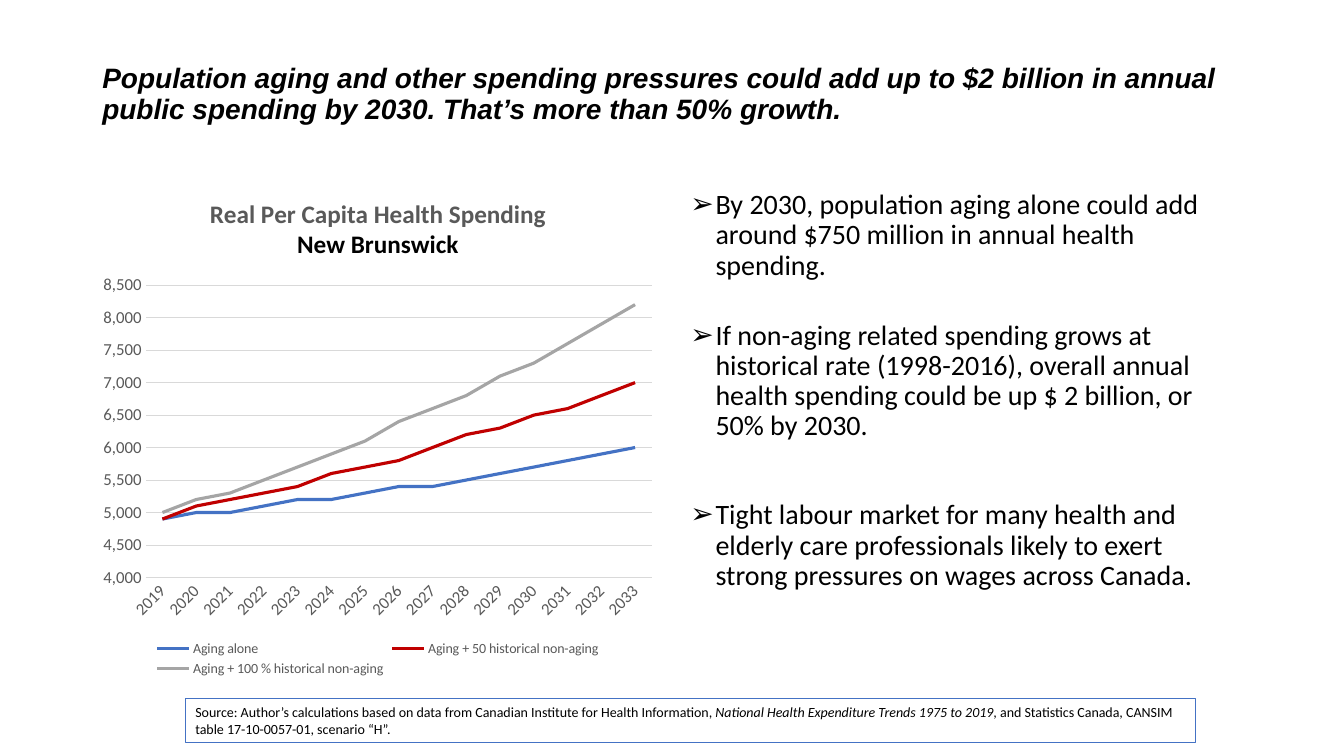
import pptx
import pptx.util
import pptx.chart.data
import pptx.dml.color
import pptx.enum.chart
import pptx.enum.shapes
import pptx.enum.text
import lxml.etree

Pt = pptx.util.Pt
MSO_ANCHOR = pptx.enum.text.MSO_ANCHOR

THEME = {
    "heading_font": "Arial", "body_font": "Calibri",
    "black": "000000", "white": "FFFFFF", "gray": "595959", "grid": "D9D9D9",
    "blue": "4472C4", "red": "C00000", "silver": "A5A5A5",
    "large": 20, "chart_title": 18, "axis": 12, "small": 10,
}

TITLE = ("Population aging and other spending pressures could add up to $2 billion "
         "in annual public spending by 2030. That’s more than 50% growth.")
BULLETS = [
    ("By 2030, population aging alone could add around $750 million in annual "
     "health spending.", 0),
    ("If non-aging related spending grows at historical rate (1998-2016), overall "
     "annual health spending could be up $ 2 billion, or 50% by 2030.", 28.5),
    ("Tight labour market for many health and elderly care professionals likely to "
     "exert strong pressures on wages across Canada.", 42),
]
SOURCE = [
    ("Source: Author’s calculations based on data from Canadian Institute for "
     "Health Information, ", False),
    ("National Health Expenditure Trends 1975 to 2019", True),
    (", and Statistics Canada, CANSIM table 17-10-0057-01, scenario “H”.", False),
]
CHART_TITLE = [("Real Per Capita Health Spending", "gray"), ("New Brunswick", "black")]
YEARS = [str(year) for year in range(2019, 2034)]
SERIES = [
    ("Aging alone", "blue",
     [4900, 5000, 5000, 5100, 5200, 5200, 5300, 5400, 5400, 5500, 5600, 5700, 5800, 5900, 6000]),
    ("Aging + 50 historical non-aging", "red",
     [4900, 5100, 5200, 5300, 5400, 5600, 5700, 5800, 6000, 6200, 6300, 6500, 6600, 6800, 7000]),
    ("Aging + 100 % historical non-aging", "silver",
     [5000, 5200, 5300, 5500, 5700, 5900, 6100, 6400, 6600, 6800, 7100, 7300, 7600, 7900, 8200]),
]

BOXES = {
    "title": (66, 36, 828, 63.6),
    "chart": (66, 127.5, 408, 358.5),
    "bullets": (486, 132.5, 408, 354),
    "source": (132.4, 499, 721.5, 31.5),
}
PLOT_AREA = (38, 76.2, 361.8, 208.9)


def color(name):
    return pptx.dml.color.RGBColor.from_string(THEME[name])


def place(name):
    return [Pt(value) for value in BOXES[name]]


def style_font(font, size, tint="black", face="body_font", bold=False, italic=False):
    font.name = THEME[face]
    font.size = Pt(THEME[size])
    font.color.rgb = color(tint)
    font.bold = bold
    font.italic = italic


def add_text(p, text, **fmt):
    r = p.add_run()
    r.text = text
    style_font(r.font, **fmt)


def add_box(s, name, anchor):
    tf = s.shapes.add_textbox(*place(name)).text_frame
    tf.word_wrap = True
    tf.vertical_anchor = anchor
    return tf


def add_paragraph(tf, index):
    return tf.paragraphs[0] if index == 0 else tf.add_paragraph()


def add_bullets(s):
    tf = add_box(s, "bullets", MSO_ANCHOR.TOP)
    tf.margin_right = Pt(10)
    for index, (text, gap) in enumerate(BULLETS):
        p = add_paragraph(tf, index)
        p.line_spacing = 0.9
        p.space_before = Pt(gap)
        pPr = p._p.get_or_add_pPr()
        pPr.set("marL", str(Pt(18)))
        pPr.set("indent", str(-Pt(18)))
        ns = pPr.nsmap["a"]
        lxml.etree.SubElement(pPr, f"{{{ns}}}buFont", typeface=THEME["heading_font"])
        lxml.etree.SubElement(pPr, f"{{{ns}}}buChar", char="➢")
        add_text(p, text, size="large")


def set_plot_area(chart):
    plot_area = chart._chartSpace.chart.plotArea
    ns = plot_area.nsmap["c"]
    for old in plot_area.findall(f"{{{ns}}}layout"):
        plot_area.remove(old)
    layout = lxml.etree.Element(f"{{{ns}}}layout")
    manual = lxml.etree.SubElement(layout, f"{{{ns}}}manualLayout")
    settings = {"layoutTarget": "inner", "xMode": "edge", "yMode": "edge"}
    width, height = BOXES["chart"][2:]
    for tag, length, whole in zip("xywh", PLOT_AREA, (width, height) * 2):
        settings[tag] = length / whole
    for tag, value in settings.items():
        lxml.etree.SubElement(manual, f"{{{ns}}}{tag}", val=str(value))
    plot_area.insert(0, layout)


def add_spending_chart(s):
    data = pptx.chart.data.CategoryChartData(number_format="#,##0")
    data.categories = YEARS
    for name, tint, values in SERIES:
        data.add_series(name, values)
    chart = s.shapes.add_chart(
        pptx.enum.chart.XL_CHART_TYPE.LINE, *place("chart"), data).chart
    style_font(chart.font, "small")

    chart.has_title = True
    tf = chart.chart_title.text_frame
    for index, (text, tint) in enumerate(CHART_TITLE):
        add_text(add_paragraph(tf, index), text, size="chart_title", tint=tint, bold=True)
    chart.chart_title.include_in_layout = False

    chart.has_legend = True
    chart.legend.position = pptx.enum.chart.XL_LEGEND_POSITION.BOTTOM
    chart.legend.include_in_layout = False
    style_font(chart.legend.font, "small", "gray")

    for axis in (chart.category_axis, chart.value_axis):
        axis.major_tick_mark = pptx.enum.chart.XL_TICK_MARK.NONE
        style_font(axis.tick_labels.font, "axis", "gray")
    chart.category_axis.format.line.color.rgb = color("grid")
    chart.category_axis.format.line.width = Pt(0.75)
    chart.category_axis._element.txPr.bodyPr.set("rot", "-2700000")

    values = chart.value_axis
    values.minimum_scale, values.maximum_scale, values.major_unit = 4000, 8500, 500
    values.tick_labels.number_format = "#,##0"
    values.tick_labels.number_format_is_linked = False
    values.format.line.fill.background()
    values.major_gridlines.format.line.color.rgb = color("grid")
    values.major_gridlines.format.line.width = Pt(0.75)

    chart.plots[0].vary_by_categories = False
    for series, (name, tint, points) in zip(chart.plots[0].series, SERIES):
        series.smooth = False
        series.marker.style = pptx.enum.chart.XL_MARKER_STYLE.NONE
        series.format.line.color.rgb = color(tint)
        series.format.line.width = Pt(2.25)
    set_plot_area(chart)


def add_source(s):
    sp = s.shapes.add_shape(pptx.enum.shapes.MSO_SHAPE.RECTANGLE, *place("source"))
    sp.shadow.inherit = False
    sp.fill.solid()
    sp.fill.fore_color.rgb = color("white")
    sp.line.color.rgb = color("blue")
    sp.line.width = Pt(1)
    tf = sp.text_frame
    tf.word_wrap = True
    tf.vertical_anchor = MSO_ANCHOR.TOP
    p = tf.paragraphs[0]
    p.alignment = pptx.enum.text.PP_ALIGN.LEFT
    for text, italic in SOURCE:
        add_text(p, text, size="small", italic=italic)


def main():
    prs = pptx.Presentation()
    prs.slide_width, prs.slide_height = Pt(960), Pt(540)
    s = prs.slides.add_slide(prs.slide_layouts[6])
    p = add_box(s, "title", MSO_ANCHOR.MIDDLE).paragraphs[0]
    p.line_spacing = 0.9
    add_text(p, TITLE, size="large", face="heading_font", bold=True, italic=True)
    add_spending_chart(s)
    add_bullets(s)
    add_source(s)
    prs.save("out.pptx")


if __name__ == "__main__":
    main()
